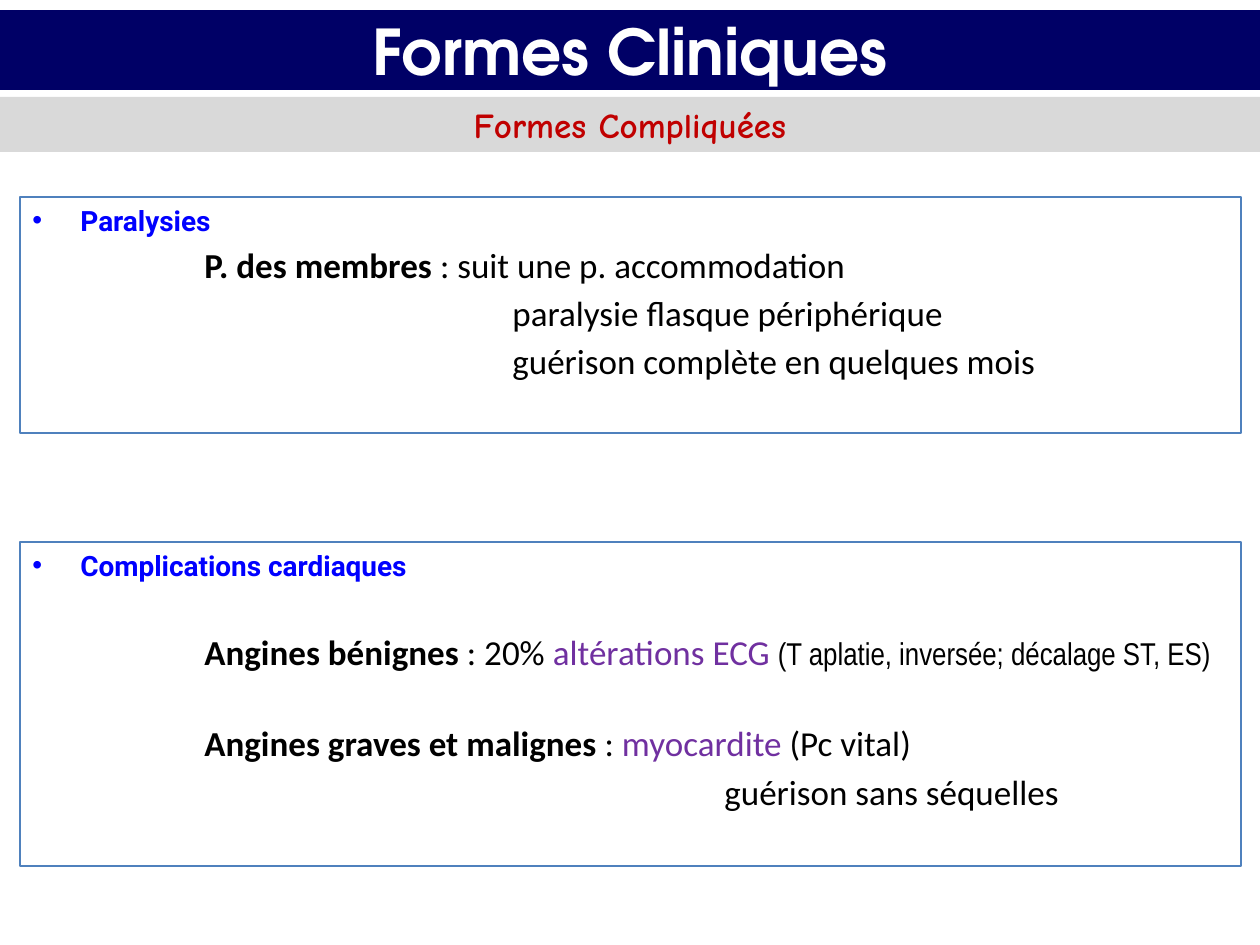
"""Build the slide on complicated clinical forms: a title, a subtitle band and two framed lists."""
from lxml import etree
from pptx import Presentation
from pptx import util as u
from pptx.dml.color import RGBColor
from pptx.enum import shapes, text
from pptx.oxml.ns import qn

SCALE = u.Inches(1) // 126
COLORS = {"navy": "000066", "white": "FFFFFF", "grey": "D9D9D9", "red": "C00000",
          "frame": "4F81BD", "blue": "0000FF", "black": "000000", "purple": "7030A0"}

TITLE = "Formes Cliniques"
SUBTITLE = "Formes Compliquées"
STRONG = {"bold": True}
PURPLE = {"color": "purple"}
NARROW = {"font": "Arial Narrow", "size": 18}
HEADING = {"font": "Roboto", "size": 16, "color": "blue", "bold": True}
HANG, ENTRY, DETAIL, OUTCOME = 48, 172, 480, 692
GAP, WIDE_GAP = 3.6, 28
FRAMES = [
    {"top": 197, "height": 236, "heading": "Paralysies", "lines": [
        (ENTRY, GAP, [("P. des membres ", STRONG), (": suit une p. accommodation", {})]),
        (DETAIL, GAP, [("paralysie flasque périphérique", {})]),
        (DETAIL, GAP, [("guérison complète en quelques mois", {})]),
    ]},
    {"top": 542, "height": 324, "heading": "Complications cardiaques", "lines": [
        (ENTRY, WIDE_GAP, [("Angines bénignes ", STRONG), (": 20% ", {}),
                           ("altérations ECG ", PURPLE),
                           ("(T aplatie, inversée; décalage ST, ES)", NARROW)]),
        (ENTRY, WIDE_GAP, [("Angines graves et malignes ", STRONG), (": ", {}),
                           ("myocardite", PURPLE), (" (Pc vital)", {})]),
        (OUTCOME, GAP, [("guérison sans séquelles", {})]),
    ]},
]


def px(length):
    return u.Emu(length * SCALE)


def rgb(name):
    return RGBColor.from_string(COLORS[name])


def add_run(paragraph, content, font="Calibri", size=20, color="black", bold=False):
    run = paragraph.add_run()
    run.text = content
    run.font.name = font
    run.font.size = u.Pt(size)
    run.font.bold = bold
    run.font.color.rgb = rgb(color)


def place(shape, left, top, width, height):
    shape.left, shape.top, shape.width, shape.height = map(px, (left, top, width, height))


def fill_band(shape, fill, content, **style):
    shape.fill.solid()
    shape.fill.fore_color.rgb = rgb(fill)
    frame = shape.text_frame
    frame.auto_size = text.MSO_AUTO_SIZE.NONE
    frame.vertical_anchor = text.MSO_ANCHOR.MIDDLE
    paragraph = frame.paragraphs[0]
    paragraph.alignment = text.PP_ALIGN.CENTER
    add_run(paragraph, content, **style)


def indent(paragraph, left, hanging=0):
    properties = paragraph._p.get_or_add_pPr()
    properties.set("marL", str(px(left)))
    properties.set("indent", str(-px(hanging)))
    return properties


def add_frame(slide, top, height, heading, lines):
    box = slide.shapes.add_textbox(px(20), px(top), px(1221), px(height))
    box.line.color.rgb = rgb("frame")
    box.line.width = u.Pt(1.5)
    frame = box.text_frame
    frame.word_wrap = True
    paragraph = frame.paragraphs[0]
    properties = indent(paragraph, HANG, HANG)
    etree.SubElement(properties, qn("a:buFont")).set("typeface", "Arial")
    etree.SubElement(properties, qn("a:buChar")).set("char", "•")
    add_run(paragraph, heading, **HEADING)
    for left, gap, runs in lines:
        paragraph = frame.add_paragraph()
        indent(paragraph, left)
        paragraph.space_before = u.Pt(gap)
        for content, style in runs:
            add_run(paragraph, content, **style)


def main():
    presentation = Presentation()
    presentation.slide_width, presentation.slide_height = px(1260), px(945)
    slide = presentation.slides.add_slide(presentation.slide_layouts[5])
    title = slide.shapes.title
    place(title, 0, 10, 1260, 80)
    fill_band(title, "navy", TITLE, font="TeX Gyre Adventor", size=36, color="white", bold=True)
    band = slide.shapes.add_shape(shapes.MSO_SHAPE.RECTANGLE, 0, px(97), px(1260), px(55))
    band.shadow.inherit = False
    band.line.fill.background()
    fill_band(band, "grey", SUBTITLE, font="Comic Neue", size=20, color="red", bold=True)
    for frame in FRAMES:
        add_frame(slide, **frame)
    presentation.save("out.pptx")


if __name__ == "__main__":
    main()
